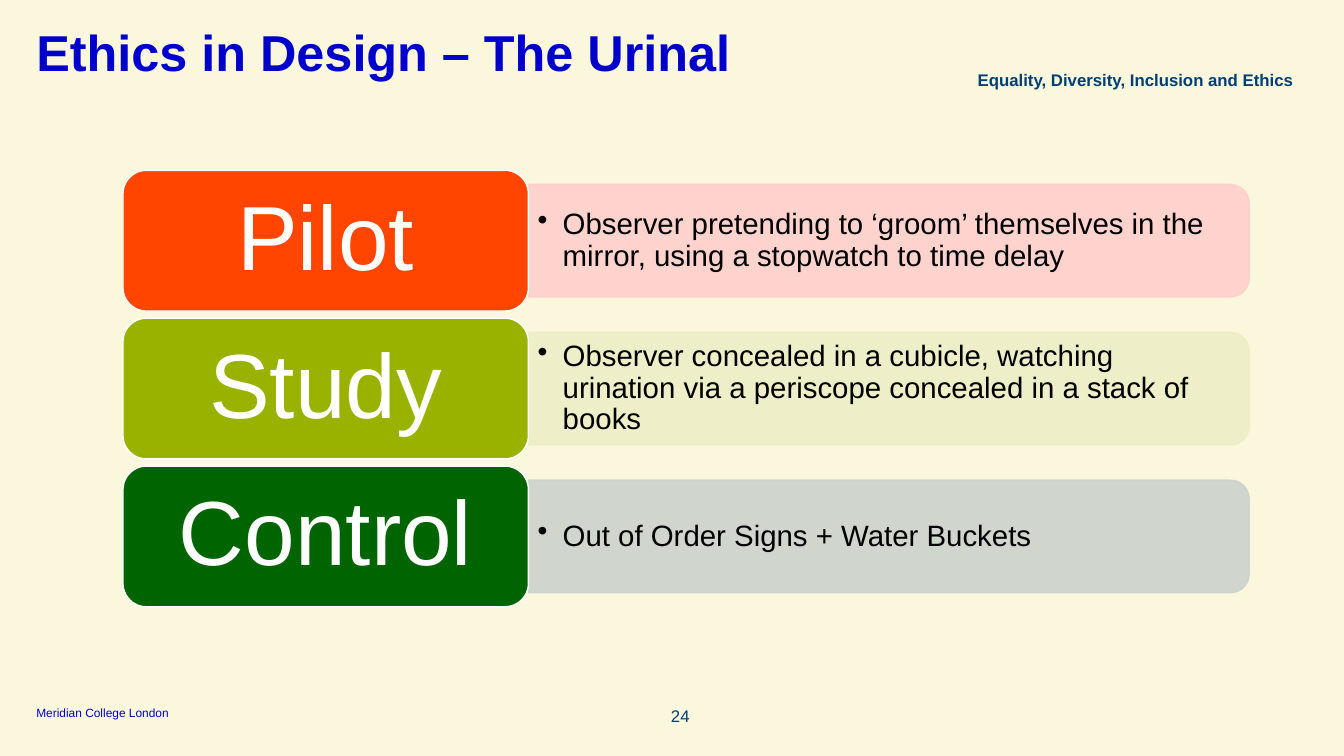
import lxml.etree
import pptx
import pptx.dml.color
import pptx.enum.shapes
import pptx.enum.text
import pptx.oxml.ns
import pptx.util

WIDTH, HEIGHT = 13.33, 7.5
COLORS = {"page": "FBF7DC", "title": "0000CD", "navy": "003E74", "black": "000000", "white": "FFFFFF"}
STAGES = [
    ("Pilot", "FF4500", "FFCFCC",
     "Observer pretending to ‘groom’ themselves in the mirror, using a stopwatch to time delay"),
    ("Study", "99B200", "EDEEC7",
     "Observer concealed in a cubicle, watching urination via a periscope concealed in a stack of books"),
    ("Control", "006400", "CCD3CC", "Out of Order Signs + Water Buckets"),
]
ROW_PITCH = 1.467
LABEL_SHARE = 0.36
DETAIL_SHARE = 0.8

Inches = pptx.util.Inches
qn = pptx.oxml.ns.qn
ALIGN = pptx.enum.text.PP_ALIGN
ANCHOR = pptx.enum.text.MSO_ANCHOR
SHAPE = pptx.enum.shapes.MSO_SHAPE


def rgb(value):
    return pptx.dml.color.RGBColor.from_string(value)


def write(shape, text, size, color, bold=False, align=ALIGN.LEFT, anchor=ANCHOR.TOP,
          spacing=1.0, inset=(0, 0)):
    """Fill a shape with one paragraph; inset is (horizontal, vertical)."""
    frame = shape.text_frame
    across, down = map(Inches, inset)
    frame_format = {
        "word_wrap": True, "auto_size": pptx.enum.text.MSO_AUTO_SIZE.NONE,
        "vertical_anchor": anchor, "margin_left": across, "margin_right": across,
        "margin_top": down, "margin_bottom": down,
    }
    para = frame.paragraphs[0]
    span = para.add_run()
    span.text = text
    span.font.color.rgb = rgb(color)
    for target, values in (
        (frame, frame_format),
        (para, {"alignment": align, "line_spacing": spacing}),
        (span.font, {"name": "Arial", "size": pptx.util.Pt(size), "bold": bold}),
    ):
        for name, value in values.items():
            setattr(target, name, value)
    return para


def add_text(page, box, *args, **options):
    return write(page.shapes.add_textbox(*map(Inches, box)), *args, **options)


def add_panel(page, kind, box, fill, line, opacity=100):
    panel = page.shapes.add_shape(kind, *map(Inches, box))
    panel.shadow.inherit = False
    panel.fill.solid()
    panel.fill.fore_color.rgb = rgb(fill)
    panel.line.color.rgb = rgb(line)
    panel.line.width = pptx.util.Pt(1)
    if opacity < 100:
        for color in panel.fill._xPr.iter(qn("a:srgbClr")):
            lxml.etree.SubElement(color, qn("a:alpha"), val=str(opacity * 1000))
    return panel


def add_bullet(para, indent):
    props = para._p.get_or_add_pPr()
    props.set("marL", str(Inches(indent)))
    props.set("indent", str(-Inches(indent)))
    lxml.etree.SubElement(props, qn("a:buChar"), char="•")


def add_stage(page, box, name, strong, pale, detail):
    """Place a label with its detail bar, rounded only at the right end."""
    left, top, width, height = box
    label_width = width * LABEL_SHARE
    bar_width, bar_height = width - label_width, height * DETAIL_SHARE
    bar_left, middle = left + label_width, top + height / 2
    # The bar is a tall shape turned a quarter clockwise about its centre.
    upright = (bar_left + (bar_width - bar_height) / 2, middle - bar_width / 2, bar_height, bar_width)
    bar = add_panel(page, SHAPE.ROUND_2_SAME_RECTANGLE, upright, pale, pale, opacity=90)
    bar.rotation = 90
    text_box = (bar_left, middle - bar_height / 2, bar_width - 0.06, bar_height)
    para = add_text(page, text_box, detail, 21, COLORS["black"], anchor=ANCHOR.MIDDLE,
                    spacing=0.9, inset=(0.09, 0.04))
    add_bullet(para, 0.25)
    label = add_panel(page, SHAPE.ROUNDED_RECTANGLE, (left, top, label_width, height), strong, COLORS["white"])
    write(label, name, 65, COLORS["white"], align=ALIGN.CENTER, anchor=ANCHOR.MIDDLE,
          spacing=0.9, inset=(0.27, 0.14))


def add_stages(page, box):
    left, top, width, height = box
    row_height = height - ROW_PITCH * (len(STAGES) - 1)
    for row, stage in enumerate(STAGES):
        add_stage(page, (left, top + row * ROW_PITCH, width, row_height), *stage)


def add_header(page, box):
    left, top, width, height = box
    title = page.shapes.title
    for name, value in zip(("left", "top", "width", "height"), (left, top, width, 0.41)):
        setattr(title, name, Inches(value))
    write(title, "Ethics in Design – The Urinal", 36, COLORS["title"], bold=True, spacing=0.9)
    add_text(page, (left + width - 3.57, top + 0.4, 3.42, height - 0.4),
             "Equality, Diversity, Inclusion and Ethics", 12, COLORS["navy"],
             bold=True, align=ALIGN.RIGHT, spacing=1.05)


def add_footer(page, box):
    left, top, width, height = box
    add_text(page, (left, top, 1.75, height), "Meridian College London", 8.5, COLORS["title"],
             anchor=ANCHOR.BOTTOM)
    add_text(page, (left + width / 2 - 0.18, top, 0.35, height), "24", 12, COLORS["navy"],
             align=ALIGN.RIGHT, spacing=1.05)


def main():
    deck = pptx.Presentation()
    deck.slide_width, deck.slide_height = Inches(WIDTH), Inches(HEIGHT)
    page = deck.slides.add_slide(deck.slide_layouts[5])
    page.background.fill.solid()
    page.background.fill.fore_color.rgb = rgb(COLORS["page"])
    add_header(page, (0.36, 0.28, 12.62, 0.74))
    add_stages(page, (1.22, 1.69, 11.17, 4.33))
    add_footer(page, (0.36, 6.99, 12.62, 0.15))
    deck.save("out.pptx")


if __name__ == "__main__":
    main()
